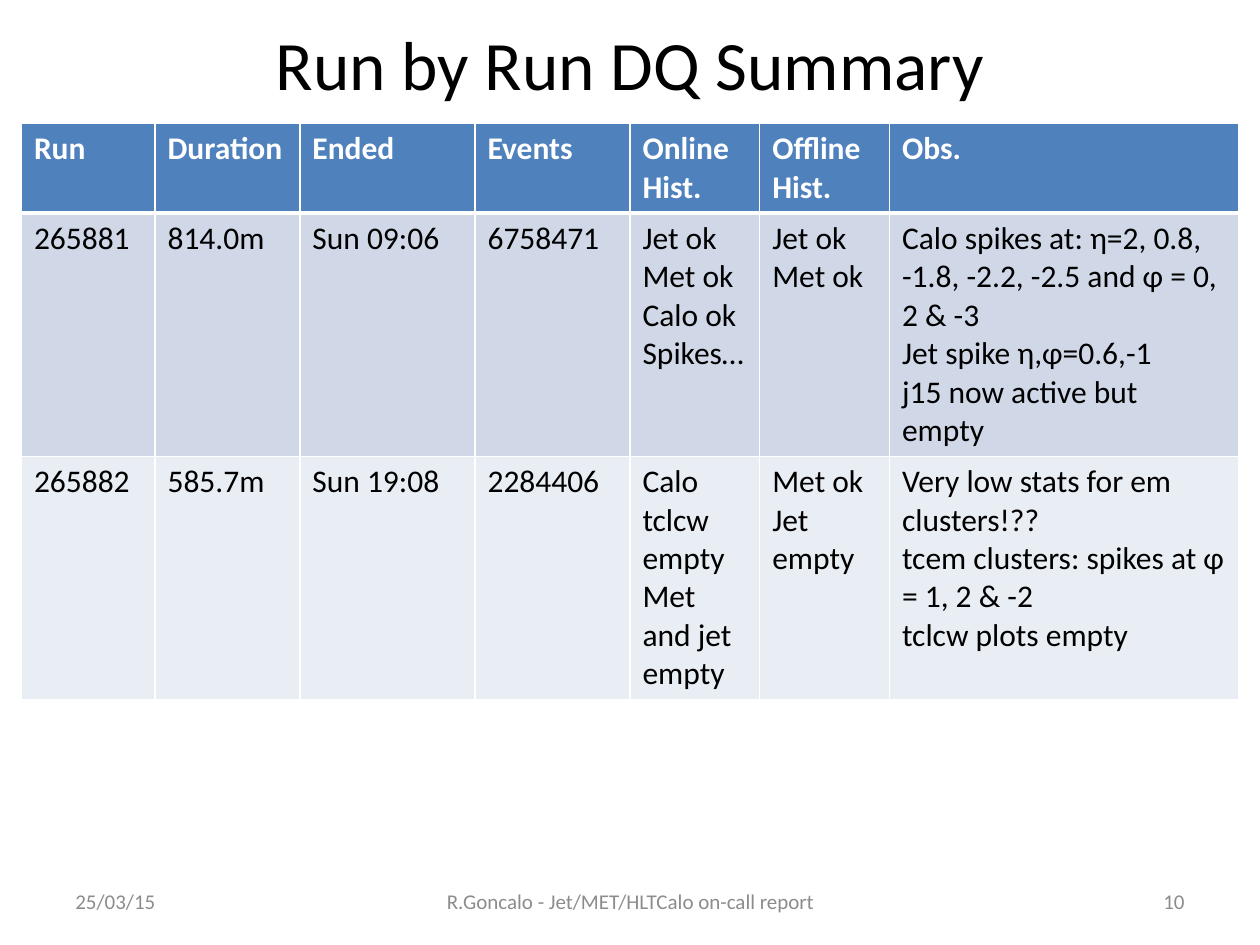
from dataclasses import dataclass

from lxml import etree
from pptx import Presentation
from pptx.dml.color import RGBColor
from pptx.enum.text import MSO_ANCHOR, PP_ALIGN
from pptx.oxml.ns import qn
from pptx.util import Inches, Pt

LEFT, CENTER, RIGHT = PP_ALIGN.LEFT, PP_ALIGN.CENTER, PP_ALIGN.RIGHT
MIDDLE = MSO_ANCHOR.MIDDLE

BLACK = RGBColor(0x00, 0x00, 0x00)
WHITE = RGBColor(0xFF, 0xFF, 0xFF)
GREY = RGBColor(0x8C, 0x8C, 0x8C)
HEADER_BLUE = RGBColor(0x4F, 0x81, 0xBD)
BAND_COLORS = (RGBColor(0xD0, 0xD8, 0xE8), RGBColor(0xE9, 0xED, 0xF4))

FONT = "Calibri"
COLUMN_WIDTHS = (1.06, 1.15, 1.39, 1.23, 1.03, 1.03, 2.77)
ROW_HEIGHTS = (0.7, 1.93, 1.93)
HEADINGS = ("Run", "Duration", "Ended", "Events", "Online Hist.", "Offline Hist.", "Obs.")


@dataclass(frozen=True)
class RunRecord:
    run: str
    duration: str
    ended: str
    events: str
    online: str
    offline: str
    observations: str

    def values(self) -> tuple[str, ...]:
        return (self.run, self.duration, self.ended, self.events,
                self.online, self.offline, self.observations)


@dataclass(frozen=True)
class FooterItem:
    text: str
    left: float
    width: float
    alignment: PP_ALIGN


RUNS = (
    RunRecord(
        "265881", "814.0m", "Sun 09:06", "6758471",
        "Jet ok\nMet ok\nCalo ok\nSpikes…",
        "Jet ok\nMet ok",
        "Calo spikes at: η=2, 0.8, -1.8, -2.2, -2.5 and φ = 0, 2 & -3\n"
        "Jet spike η,φ=0.6,-1\nj15 now active but empty",
    ),
    RunRecord(
        "265882", "585.7m", "Sun 19:08", "2284406",
        "Calo tclcw empty\nMet and jet empty",
        "Met ok\nJet empty",
        "Very low stats for em clusters!??\n"
        "tcem clusters: spikes at φ = 1, 2 & -2\ntclcw plots empty",
    ),
)

FOOTER = (
    FooterItem("25/03/15", 0.5, 2.33, LEFT),
    FooterItem("R.Goncalo - Jet/MET/HLTCalo on-call report", 3.42, 3.17, CENTER),
    FooterItem("10", 7.17, 2.33, RIGHT),
)


def write_text(text_frame, text: str, size: float, color: RGBColor,
               alignment: PP_ALIGN = LEFT, bold: bool = False) -> None:
    """Write one paragraph for each line of text."""
    text_frame.text = text
    font_format = {"name": FONT, "size": Pt(size), "bold": bold}
    for paragraph in text_frame.paragraphs:
        paragraph.alignment = alignment
        for run in paragraph.runs:
            for name, value in font_format.items():
                setattr(run.font, name, value)
            run.font.color.rgb = color


def add_borders(cell, bottom_width: float) -> None:
    properties = cell._tc.get_or_add_tcPr()
    widths = {"a:lnL": 1, "a:lnR": 1, "a:lnT": 1, "a:lnB": bottom_width}
    for tag, width in widths.items():
        line = etree.SubElement(properties, qn(tag), w=str(Pt(width)))
        fill = etree.SubElement(line, qn("a:solidFill"))
        etree.SubElement(fill, qn("a:srgbClr"), val=str(WHITE))


def add_title(slide, text: str) -> None:
    title = slide.shapes.title
    placement = {"left": 0.5, "top": 0.15, "width": 9, "height": 0.7}
    for name, value in placement.items():
        setattr(title, name, Inches(value))
    title.text_frame.vertical_anchor = MIDDLE
    write_text(title.text_frame, text, 39.6, BLACK, CENTER)


def add_run_table(slide) -> None:
    rows = (HEADINGS, *(record.values() for record in RUNS))
    table = slide.shapes.add_table(
        len(rows), len(HEADINGS), Inches(0.17), Inches(0.98),
        Inches(sum(COLUMN_WIDTHS)), Inches(sum(ROW_HEIGHTS)),
    ).table
    for column, width in zip(table.columns, COLUMN_WIDTHS):
        column.width = Inches(width)
    for row, height in zip(table.rows, ROW_HEIGHTS):
        row.height = Inches(height)
    for row_index, values in enumerate(rows):
        is_header = row_index == 0
        fill_color = HEADER_BLUE if is_header else BAND_COLORS[(row_index - 1) % 2]
        for column_index, text in enumerate(values):
            cell = table.cell(row_index, column_index)
            write_text(cell.text_frame, text, 18, WHITE if is_header else BLACK,
                       bold=is_header)
            # The header's thick rule is also the top edge of the first run row.
            add_borders(cell, 3 if is_header else 1)
            if row_index == 1:
                cell._tc.tcPr.find(qn("a:lnT")).set("w", str(Pt(3)))
            cell.fill.solid()
            cell.fill.fore_color.rgb = fill_color


def add_footer_item(slide, item: FooterItem) -> None:
    box = slide.shapes.add_textbox(Inches(item.left), Inches(6.95),
                                   Inches(item.width), Inches(0.4))
    box.text_frame.word_wrap = True
    box.text_frame.vertical_anchor = MIDDLE
    write_text(box.text_frame, item.text, 12, GREY, item.alignment)


def main() -> None:
    presentation = Presentation()
    presentation.slide_width = Inches(10)
    presentation.slide_height = Inches(7.5)
    title_only = presentation.slide_layouts.get_by_name("Title Only")
    slide = presentation.slides.add_slide(title_only)
    add_title(slide, "Run by Run DQ Summary")
    add_run_table(slide)
    for item in FOOTER:
        add_footer_item(slide, item)
    presentation.save("out.pptx")


if __name__ == "__main__":
    main()
